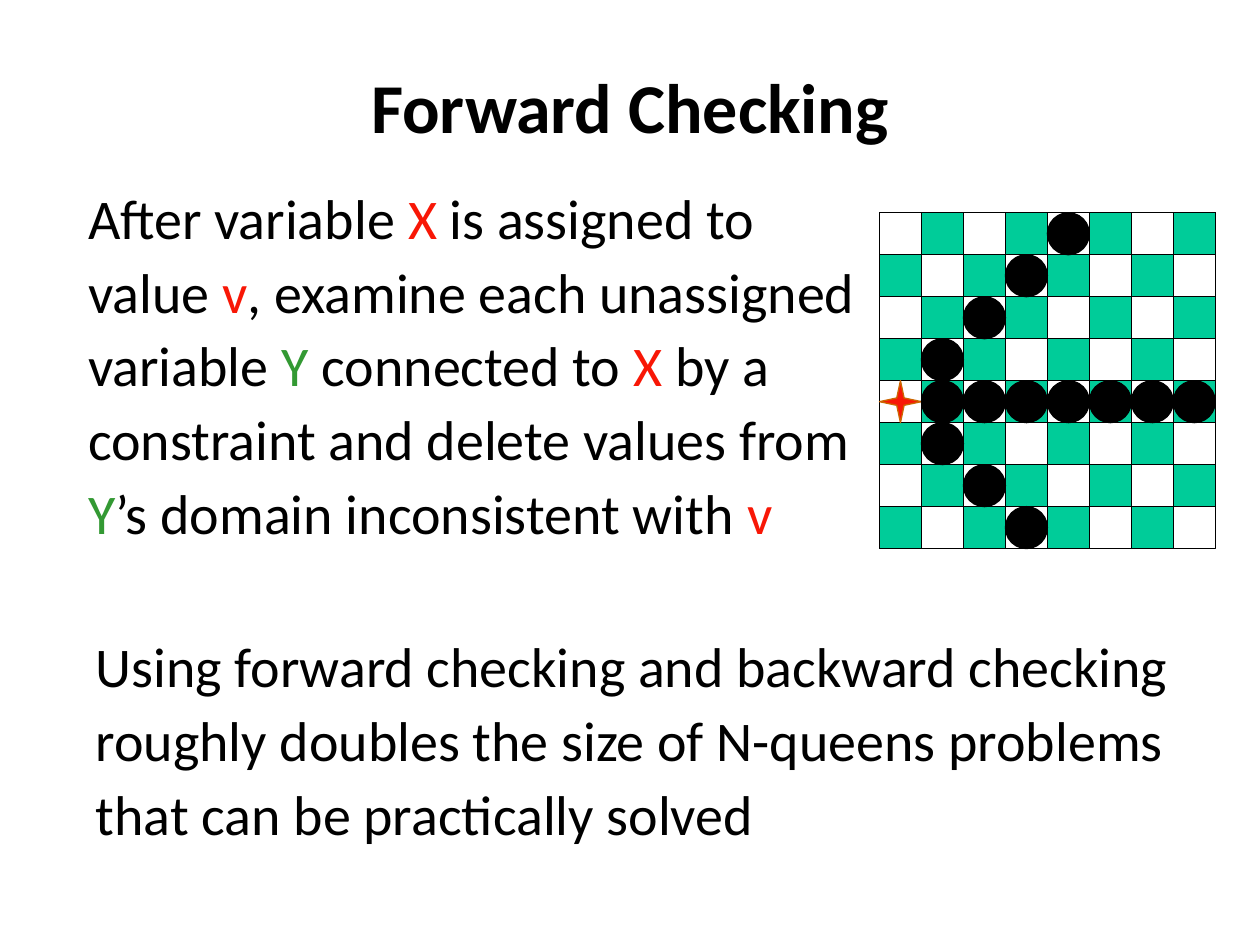
from dataclasses import dataclass

from lxml import etree
from pptx import Presentation
from pptx.dml.color import RGBColor
from pptx.enum.shapes import MSO_SHAPE
from pptx.enum.text import MSO_ANCHOR, MSO_AUTO_SIZE, PP_ALIGN
from pptx.oxml.ns import qn
from pptx.util import Cm, Pt

RECT, OVAL, STAR = MSO_SHAPE.RECTANGLE, MSO_SHAPE.OVAL, MSO_SHAPE.STAR_4_POINT
TOP, MIDDLE = MSO_ANCHOR.TOP, MSO_ANCHOR.MIDDLE
LEFT, CENTER = PP_ALIGN.LEFT, PP_ALIGN.CENTER
NO_FIT = MSO_AUTO_SIZE.NONE

BLACK = RGBColor(0x00, 0x00, 0x00)
RED = RGBColor(0xF8, 0x17, 0x06)
GREEN = RGBColor(0x33, 0x99, 0x33)
TEAL = RGBColor(0x00, 0xCC, 0x99)
ORANGE = RGBColor(0xCC, 0x66, 0x00)

FONT = "Calibri"
SIZE = 8
BOARD_LEFT, BOARD_TOP, BOARD = Cm(17.73), Cm(4.29), Cm(6.77)
QUEEN_ROW, QUEEN_COL = 4, 0


@dataclass
class Piece:
    kind: int
    row: int
    col: int
    fill: RGBColor | None
    line: RGBColor = BLACK
    span: int = 1


def place(sp, left: float, top: float, width: float, height: float) -> None:
    sp.left, sp.top, sp.width, sp.height = Cm(left), Cm(top), Cm(width), Cm(height)


def write(sp, runs, *, size=32, bold=False, align=LEFT, anchor=TOP,
          line_spacing=None, before=0) -> None:
    """Fill a shape with one unbulleted paragraph of (text, colour) runs."""
    tf = sp.text_frame
    tf.word_wrap = True
    tf.auto_size = NO_FIT
    tf.vertical_anchor = anchor
    p = tf.paragraphs[0]
    p.alignment = align
    p.line_spacing = line_spacing
    p.space_before = Pt(before)
    pPr = p._p.get_or_add_pPr()
    pPr.set("marL", "0")
    pPr.set("indent", "0")
    etree.SubElement(pPr, qn("a:buNone"))
    for text, color in runs:
        r = p.add_run()
        r.text = text
        r.font.name = FONT
        r.font.size = Pt(size)
        r.font.bold = bold
        r.font.color.rgb = color


def draw(shapes, piece: Piece) -> None:
    cell = BOARD / SIZE
    side = round(cell * piece.span)
    sp = shapes.add_shape(piece.kind, round(BOARD_LEFT + piece.col * cell),
                          round(BOARD_TOP + piece.row * cell), side, side)
    sp.shadow.inherit = False
    if piece.fill is None:
        sp.fill.background()
    else:
        sp.fill.solid()
        sp.fill.fore_color.rgb = piece.fill
    sp.line.color.rgb = piece.line
    sp.line.width = Pt(0.75)
    if piece.kind == STAR:
        sp.adjustments[0] = 0.125


def board_pieces() -> list[Piece]:
    cells = [(row, col) for row in range(SIZE) for col in range(SIZE)]
    frame = Piece(RECT, 0, 0, None, span=SIZE)
    squares = [Piece(RECT, r, c, TEAL) for r, c in cells if (r + c) % 2]
    queen = Piece(STAR, QUEEN_ROW, QUEEN_COL, RED, ORANGE)
    # Squares the queen attacks along its row and diagonals
    deleted = [Piece(OVAL, r, c, BLACK) for r, c in cells if c > QUEEN_COL
               and abs(r - QUEEN_ROW) in (0, c - QUEEN_COL)]
    return [frame, *squares, queen, *deleted]


def main() -> None:
    prs = Presentation()
    prs.slide_width, prs.slide_height = Cm(25.4), Cm(19.05)
    s = prs.slides.add_slide(prs.slide_layouts[1])

    # Title
    title = s.shapes.title
    place(title, 1.9, 0.53, 21.6, 3.18)
    write(title, [("Forward Checking", BLACK)], size=40, bold=True,
          align=CENTER, anchor=MIDDLE)

    # Definition
    body = s.placeholders[1]
    place(body, 1.52, 3.43, 16.08, 7.59)
    write(body, [
        ("After variable ", BLACK), ("X", RED),
        (" is assigned to value ", BLACK), ("v", RED),
        (", examine each unassigned variable ", BLACK), ("Y", GREEN),
        (" connected to ", BLACK), ("X", RED),
        (" by a constraint and delete values from ", BLACK), ("Y", GREEN),
        ("’s domain inconsistent with ", BLACK), ("v", RED),
    ], line_spacing=1.1, before=6.4)

    # Chessboard
    board = s.shapes.add_group_shape()
    for piece in board_pieces():
        draw(board.shapes, piece)

    # Conclusion
    note = s.shapes.add_textbox(0, 0, 0, 0)
    place(note, 1.68, 12.47, 22.73, 5.74)
    write(note, [("Using forward checking and backward checking roughly doubles "
                  "the size of N-queens problems that can be practically solved",
                  BLACK)], line_spacing=1.1, before=6.4)

    prs.save("out.pptx")


if __name__ == "__main__":
    main()
